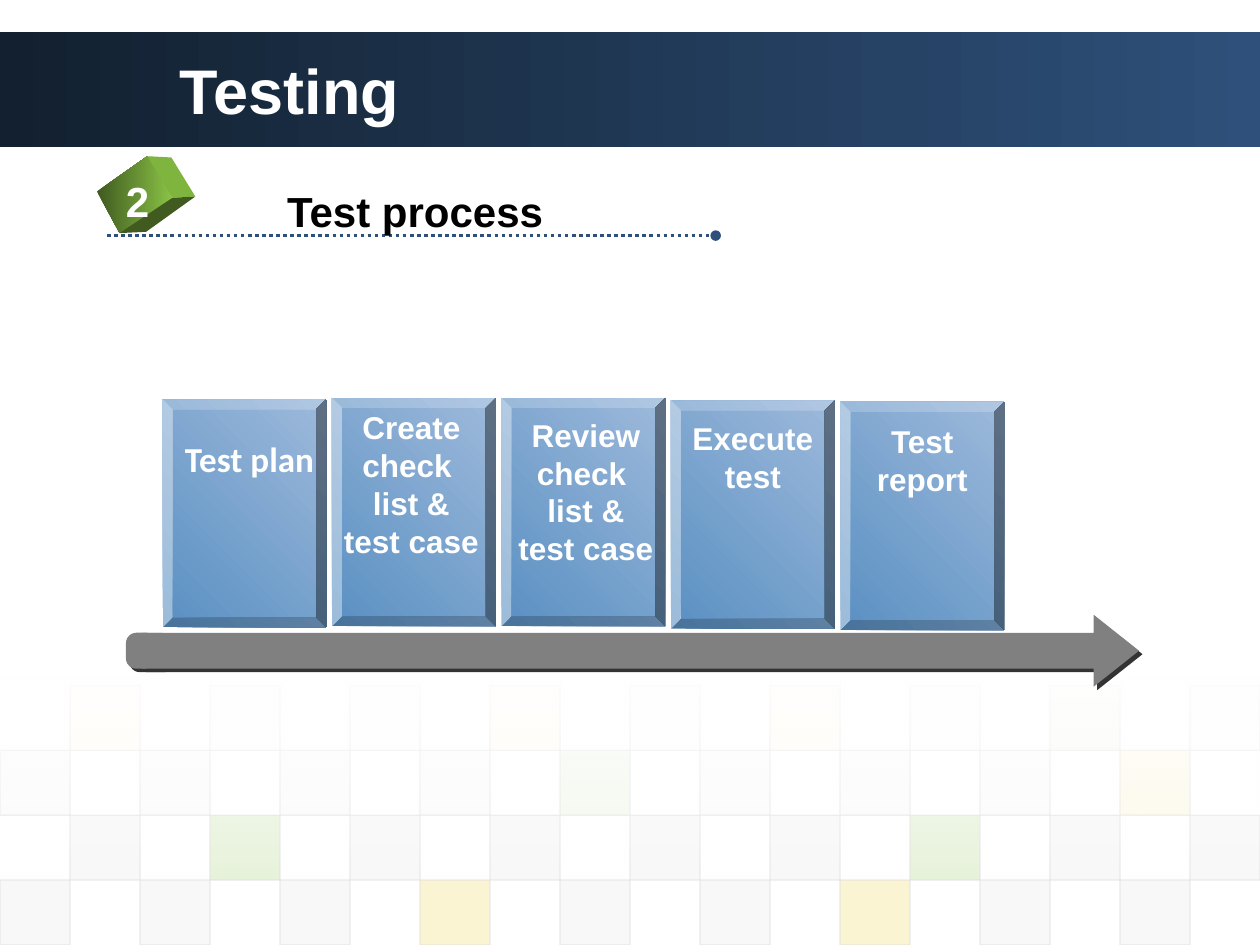
import pptx
import pptx.util
import pptx.dml.color
import pptx.enum.dml
import pptx.enum.shapes
import pptx.enum.text
import pptx.oxml
from pptx.oxml.ns import qn
from dataclasses import dataclass
from lxml import etree

Inches = pptx.util.Inches
Pt = pptx.util.Pt
SHAPE = pptx.enum.shapes.MSO_SHAPE
ALIGN = pptx.enum.text.PP_ALIGN
ANCHOR = pptx.enum.text.MSO_ANCHOR
NS = "http://schemas.openxmlformats.org/drawingml/2006/main"


@dataclass(frozen=True)
class Theme:
    font: str = "Arial"
    plan_font: str = "Calibri"
    white: str = "FFFFFF"
    black: str = "000000"
    navy: str = "2E507A"
    navy_dark: str = "12202F"
    green: str = "8AC246"
    green_mid: str = "7FB53F"
    green_dark: str = "405A20"
    yellow: str = "EFC821"
    pale: str = "EAEAEA"
    grid: str = "DDDDDD"
    block: str = "5A90C2"
    block_light: str = "9DB9DB"
    arrow: str = "808080"
    shadow: str = "333333"
    title: int = 36
    heading: int = 24
    plan: int = 20
    step: int = 18


T = Theme()


def rgb(value):
    return pptx.dml.color.RGBColor.from_string(value)


def set_alpha(parent, *percents):
    """Give the colours below parent these opacities, in order."""
    for clr, percent in zip(parent.iter(qn("a:srgbClr")), percents):
        etree.SubElement(clr, qn("a:alpha"), val=str(percent * 1000))


def paint(sp, *colors, angle=0):
    """Fill with one colour, or a gradient of two; no line, no shadow."""
    sp.shadow.inherit = False
    sp.line.fill.background()
    if len(colors) == 1:
        sp.fill.solid()
        sp.fill.fore_color.rgb = rgb(colors[0])
        return
    sp.fill.gradient()
    sp.fill.gradient_angle = angle
    for stop, color in zip(sp.fill.gradient_stops, colors):
        stop.color.rgb = rgb(color)


def add_box(shapes, kind, box, *colors, angle=0):
    sp = shapes.add_shape(kind, *map(Inches, box))
    paint(sp, *colors, angle=angle)
    return sp


def add_text(s, box, lines, size, color=T.white, font=T.font, align=None,
             anchor=ANCHOR.TOP, wrap=True):
    tf = s.shapes.add_textbox(*map(Inches, box)).text_frame
    tf.word_wrap, tf.vertical_anchor = wrap, anchor
    look = {"name": font, "size": Pt(size), "bold": True}
    for i, line in enumerate(lines):
        p = tf.paragraphs[0] if i == 0 else tf.add_paragraph()
        p.alignment = align
        r = p.add_run()
        r.text = line
        for key, value in look.items():
            setattr(r.font, key, value)
        r.font.color.rgb = rgb(color)


def add_tiles(s, left, top, width, height):
    """Checkerboard of tiles that fades out towards the top."""
    colors = {"Y": T.yellow, "G": T.green, "E": T.pale, "D": T.grid}
    rows = [("YEEYDYEGE", 5), ("DDDDGDDDY", 10), ("DGDDDDGDD", 20), ("DDDYDDYDD", 20)]
    w, h = width / 18, height / len(rows)
    for i, (codes, opacity) in enumerate(rows):
        for j, code in enumerate(codes):
            x = left + (2 * j + (i + 1) % 2) * w
            sp = add_box(s.shapes, SHAPE.RECTANGLE, (x, top + i * h, w, h), colors[code])
            sp.line.color.rgb = rgb(T.grid)
            sp.line.width = Pt(0.75)
            set_alpha(sp._element.spPr, opacity, 60)
    fade = add_box(s.shapes, SHAPE.RECTANGLE, (0, top - 0.07, 10, 1.62),
                   T.white, T.white, angle=270)
    set_alpha(fade._element.spPr, 90, 0)


def add_header(s, left, top, width, height):
    box = (left, top, width, height)
    add_box(s.shapes, SHAPE.RECTANGLE, box, T.navy_dark, T.navy)
    add_text(s, (left + 1.33, top, 8.08, height), ["Testing"], T.title, anchor=ANCHOR.MIDDLE)


def add_cube(s, left, top):
    """Tilted block with a front, a side and an under face."""
    a, b, c, d = (0, 0.28), (0.4, 0), (0.6, 0.33), (0.18, 0.61)
    e, f, g = (0.59, 0.01), (0.78, 0.32), (0.39, 0.6)
    faces = [((a, b, c, d), (T.green_dark, T.green)),
             ((b, e, f, c), (T.green_mid,)),
             ((c, f, g, d), (T.green_dark,))]
    for points, colors in faces:
        xy = [(Inches(left + x), Inches(top + y)) for x, y in points]
        builder = s.shapes.build_freeform(*xy[0])
        builder.add_line_segments(xy[1:], close=True)
        paint(builder.convert_to_shape(), *colors)


def add_heading(s, left, top, width):
    line = s.shapes.add_connector(pptx.enum.shapes.MSO_CONNECTOR.STRAIGHT, Inches(left),
                                  Inches(top + 0.63), Inches(left + width), Inches(top + 0.63))
    line.line.color.rgb = rgb(T.navy)
    line.line.width = Pt(2)
    line.line.dash_style = pptx.enum.dml.MSO_LINE.ROUND_DOT
    etree.SubElement(line.line._get_or_add_ln(), qn("a:tailEnd"), type="oval")
    etree.SubElement(line._element.spPr, qn("a:effectLst"))
    add_cube(s, left - 0.08, top)
    add_text(s, (left + 0.05, top + 0.1, 0.36, 0.5), ["2"], T.heading,
             align=ALIGN.CENTER, wrap=False)
    add_text(s, (left + 1.33, top + 0.18, 4.71, 0.5), ["Test process"], T.heading, T.black)


def add_arrow(s, left, top, width, height):
    """Arrow with a rounded tail, both casting a hard shadow."""
    group = s.shapes.add_group_shape()
    half = height / 2
    parts = [(SHAPE.ROUNDED_RECTANGLE, (left, top + half / 2, 0.36, half), [0.29]),
             (SHAPE.RIGHT_ARROW, (left + 0.13, top, width - 0.13, height), [0.5, 0.63])]
    for kind, box, adjustments in parts:
        sp = add_box(group.shapes, kind, box, T.arrow)
        for i, value in enumerate(adjustments):
            sp.adjustments[i] = value
        sp._element.spPr.find(qn("a:effectLst")).append(pptx.oxml.parse_xml(
            f'<a:outerShdw xmlns:a="{NS}" dist="{Pt(2.8)}" dir="2700000" '
            f'algn="ctr" rotWithShape="0"><a:srgbClr val="{T.shadow}"/></a:outerShdw>'))


def add_steps(s, left, top, width, height):
    """Row of bevelled blocks; each step has its own drop and text offset."""
    plan = {"size": T.plan, "font": T.plan_font}
    case = ["check ", "list &", "test case"]
    steps = [(["Test plan"], 0.01, 0.04, 0.25, plan),
             (["Create"] + case, 0, -0.02, 0.03, {}),
             (["Review"] + case, 0, 0.02, 0.09, {}),
             (["Execute", "test"], 0.02, 0, 0.1, {}),
             (["Test", "report"], 0.03, 0, 0.11, {})]
    block = 1.3
    pitch = (width - block) / (len(steps) - 1)
    for i, (lines, drop, dx, dy, look) in enumerate(steps):
        x, y = left + i * pitch, top + drop
        sp = add_box(s.shapes, SHAPE.BEVEL, (x, y, block, height),
                     T.block, T.block_light, angle=45)
        sp.adjustments[0] = 0.06
        add_text(s, (x + dx, y + dy, block, 0.31 + 0.3 * len(lines) - 0.2 + 0.2), lines,
                 **({"size": T.step} | look), align=ALIGN.CENTER, wrap=False)


def main():
    prs = pptx.Presentation()
    prs.slide_width, prs.slide_height = Inches(10), Inches(7.5)
    s = prs.slides.add_slide(prs.slide_layouts[6])
    add_tiles(s, 0, 5.44, 10, 2.06)
    add_header(s, 0, 0.25, 10, 0.92)
    add_heading(s, 0.85, 1.24, 4.83)
    add_arrow(s, 1, 4.88, 8.04, 0.57)
    add_steps(s, 1.29, 3.16, 6.68, 1.81)
    prs.save("out.pptx")


if __name__ == "__main__":
    main()
